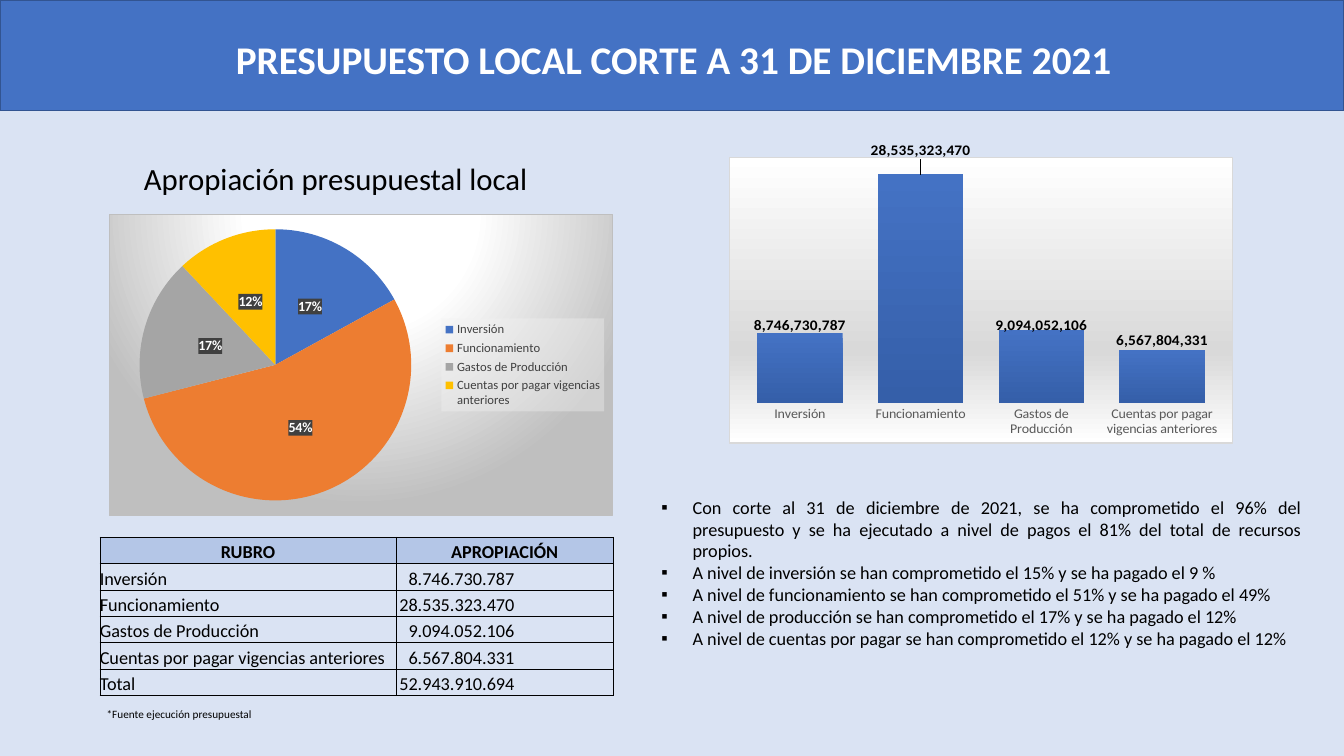
from dataclasses import dataclass

from lxml import etree
from pptx import Presentation
from pptx.chart.data import CategoryChartData
from pptx.dml.color import RGBColor
from pptx.enum import chart as ch, shapes, text
from pptx.oxml import ns, parse_xml
from pptx.util import Inches, Pt


@dataclass(frozen=True)
class Theme:
    """Colours, typeface and type sizes of the slide."""
    font: str = "Calibri"
    background: str = "DAE3F3"
    band: str = "4472C4"
    band_edge: str = "325491"
    bar_end: str = "355FA9"
    header: str = "B4C6E7"
    ink: str = "000000"
    paper: str = "FFFFFF"
    axis: str = "595959"
    legend: str = "404040"
    bar_edge: str = "D9D9D9"
    pie_edge: str = "BFBFBF"
    slices: tuple = ("4472C4", "ED7D31", "A5A5A5", "FFC000")
    title: int = 28
    heading: int = 22
    body: int = 13
    value: int = 11
    label: int = 10
    key: int = 9
    note: int = 8


THEME = Theme()
CATEGORIES = ("Inversión", "Funcionamiento", "Gastos de Producción",
              "Cuentas por pagar vigencias anteriores")
AMOUNTS = (8746730787, 28535323470, 9094052106, 6567804331)
SHARES = (17, 54, 17, 12)
LABEL_SHIFTS = (-0.07, -0.13, -0.06, -0.08)
FINDINGS = (
    "Con corte al 31 de diciembre de 2021, se ha comprometido el 96% del presupuesto "
    "y se ha ejecutado a nivel de pagos el 81% del total de recursos propios.",
    "A nivel de inversión se han comprometido el 15% y se ha pagado el 9 %",
    "A nivel de funcionamiento se han comprometido el 51% y se ha pagado el 49%",
    "A nivel de producción se han comprometido el 17% y se ha pagado el 12%",
    "A nivel de cuentas por pagar se han comprometido el 12% y se ha pagado el 12%",
)


def rgb(code):
    """Return a colour from its hex code."""
    return RGBColor.from_string(code)


def apply(target, **values):
    """Set each given attribute on the target."""
    for name, value in values.items():
        setattr(target, name, value)


def style_font(font, size, color=THEME.ink, bold=False):
    """Give a font the theme's face with a size and colour."""
    apply(font, name=THEME.font, size=Pt(size), bold=bold)
    font.color.rgb = rgb(color)


def place(shape, left, top, width, height):
    """Put a shape at a place given in inches."""
    apply(shape, left=Inches(left), top=Inches(top),
          width=Inches(width), height=Inches(height))


def write(frame, lines, size, color=THEME.ink, bold=False, align=text.PP_ALIGN.LEFT):
    """Fill a text frame with one paragraph per line."""
    apply(frame, word_wrap=True, auto_size=text.MSO_AUTO_SIZE.NONE,
          vertical_anchor=text.MSO_ANCHOR.TOP)
    for index, line in enumerate(lines):
        paragraph = frame.add_paragraph() if index else frame.paragraphs[0]
        apply(paragraph, alignment=align, space_before=Pt(0), line_spacing=1.0)
        run = paragraph.add_run()
        run.text = line
        style_font(run.font, size, color, bold)


def add_caption(slide, box, line, size):
    """Add a one-line text box."""
    caption = slide.shapes.add_textbox(*map(Inches, box))
    write(caption.text_frame, [line], size)


def add_band(slide):
    """Add the header band behind the title."""
    band = slide.shapes.add_shape(shapes.MSO_SHAPE.RECTANGLE, 0, 0,
                                  Inches(13.33), Inches(1.1))
    band.shadow.inherit = False
    band.fill.solid()
    band.fill.fore_color.rgb = rgb(THEME.band)
    band.line.color.rgb = rgb(THEME.band_edge)
    band.line.width = Pt(1)
    slide.shapes._spTree.insert(2, band._element)


def fill_findings(body):
    """Write the bulleted findings into the body placeholder."""
    place(body, 6.46, 4.87, 6.54, 1.94)
    write(body.text_frame, FINDINGS, THEME.body)
    for index, paragraph in enumerate(body.text_frame.paragraphs):
        if index < 3:
            paragraph.alignment = text.PP_ALIGN.JUSTIFY
        properties = paragraph._p.get_or_add_pPr()
        properties.set("marL", str(Inches(0.31)))
        properties.set("indent", str(Inches(-0.31)))
        etree.SubElement(properties, ns.qn("a:buChar"), char="▪")


def border_cell(cell):
    """Draw thin lines on all four sides of a cell."""
    for index, side in enumerate(("lnL", "lnR", "lnT", "lnB")):
        cell._tc.get_or_add_tcPr().insert(index, parse_xml(
            f'<a:{side} {ns.nsdecls("a")} w="{Pt(0.5)}"><a:solidFill>'
            f'<a:srgbClr val="{THEME.ink}"/></a:solidFill></a:{side}>'))


def add_budget_table(slide):
    """Add the table of items and their appropriations."""
    amounts = [f"{amount:,}".replace(",", ".") for amount in AMOUNTS]
    rows = [("RUBRO", "APROPIACIÓN"), *zip(CATEGORIES, amounts),
            ("Total", "52.943.910.694")]
    table = slide.shapes.add_table(len(rows), 2, *map(Inches, (0.99, 5.33, 5.09, 1.57))).table
    apply(table, first_row=False, horz_banding=False)
    for column, width in zip(table.columns, (2.94, 2.15)):
        column.width = Inches(width)
    for r, row in enumerate(rows):
        for c, entry in enumerate(row):
            cell = table.cell(r, c)
            align = text.PP_ALIGN.RIGHT if c else text.PP_ALIGN.LEFT
            write(cell.text_frame, [entry], THEME.body, bold=r == 0,
                  align=align if r else text.PP_ALIGN.CENTER)
            apply(cell, margin_left=0, margin_top=0, margin_bottom=0,
                  margin_right=Inches(0.98 if r and c else 0),
                  vertical_anchor=text.MSO_ANCHOR.BOTTOM)
            if r:
                cell.fill.background()
            else:
                cell.fill.solid()
                cell.fill.fore_color.rgb = rgb(THEME.header)
            border_cell(cell)


def layout_xml(mode="", **fractions):
    """Build a manual chart layout from fractions of the chart area."""
    parts = "".join(f'<c:{name} val="{value}"/>' for name, value in fractions.items())
    return parse_xml(f'<c:layout {ns.nsdecls("c")}><c:manualLayout>{mode}{parts}'
                     '</c:manualLayout></c:layout>')


def add_chart(slide, kind, box, values, plot, stops, direction, edge):
    """Add a one-series chart with a gradient background."""
    data = CategoryChartData()
    data.categories = CATEGORIES
    data.add_series("Series 1", values)
    chart = slide.shapes.add_chart(kind, *map(Inches, box), data).chart
    apply(chart, has_title=False, has_legend=False)
    style_font(chart.font, THEME.label)
    area = chart._chartSpace.chart.plotArea
    for old in area.findall(ns.qn("c:layout")):
        area.remove(old)
    mode = ('<c:layoutTarget val="inner"/><c:xMode val="edge"/><c:yMode val="edge"/>')
    area.insert(0, layout_xml(mode, **dict(zip("xywh", plot))))
    colors = "".join(f'<a:gs pos="{at * 1000}"><a:srgbClr val="{code}"/></a:gs>'
                     for at, code in stops)
    chart._chartSpace.chart.addnext(parse_xml(
        f'<c:spPr {ns.nsdecls("c", "a")}><a:gradFill><a:gsLst>{colors}</a:gsLst>{direction}'
        f'</a:gradFill><a:ln w="{Pt(0.75)}"><a:solidFill><a:srgbClr val="{edge}"/>'
        '</a:solidFill></a:ln></c:spPr>'))
    return chart


def add_amount_chart(slide):
    """Add the column chart of amounts."""
    chart = add_chart(slide, ch.XL_CHART_TYPE.COLUMN_CLUSTERED, (7.23, 1.4, 5, 3), AMOUNTS,
                      (0.02, 0.02, 0.96, 0.84),
                      ((0, THEME.paper), (68, THEME.bar_edge), (100, THEME.paper)),
                      '<a:lin ang="5400000" scaled="0"/>', THEME.bar_edge)
    apply(chart.value_axis, visible=False, has_major_gridlines=False,
          minimum_scale=0, maximum_scale=30000000000)
    chart.category_axis.major_tick_mark = ch.XL_TICK_MARK.NONE
    chart.category_axis.format.line.fill.background()
    style_font(chart.category_axis.tick_labels.font, THEME.label, THEME.axis)
    apply(chart.plots[0], gap_width=41, vary_by_categories=False)
    bars = chart.plots[0].series[0]
    bars.format.fill.gradient()
    bars.format.fill.gradient_angle = 270
    for stop, at, code in zip(bars.format.fill.gradient_stops, (0, 1),
                              (THEME.band, THEME.bar_end)):
        stop.position = at
        stop.color.rgb = rgb(code)
    apply(bars.data_labels, show_value=True, number_format="#,##0",
          number_format_is_linked=False, position=ch.XL_LABEL_POSITION.INSIDE_END)
    style_font(bars.data_labels.font, THEME.value, bold=True)
    for index, shift in enumerate(LABEL_SHIFTS):
        label = bars.points[index].data_label
        label.position = ch.XL_LABEL_POSITION.INSIDE_END
        style_font(label.font, THEME.value, bold=True)
        element = label._get_or_add_dLbl()
        element.insert(1, layout_xml(x=0, y=shift))
        element.insert(2, parse_xml(f'<c:numFmt {ns.nsdecls("c")} formatCode="#,##0" '
                                    'sourceLinked="0"/>'))


def shade_box(code, alpha):
    """Build a see-through fill for a chart part."""
    return parse_xml(f'<c:spPr {ns.nsdecls("c", "a")}><a:solidFill><a:srgbClr val="{code}">'
                     f'<a:alpha val="{alpha * 1000}"/></a:srgbClr></a:solidFill></c:spPr>')


def add_share_chart(slide):
    """Add the pie chart of shares."""
    focus = ('<a:path path="circle"><a:fillToRect l="50000" t="-80000" r="50000" '
             'b="180000"/></a:path>')
    chart = add_chart(slide, ch.XL_CHART_TYPE.PIE, (1.08, 2.12, 5, 3), SHARES,
                      (0.06, 0.05, 0.54, 0.9),
                      ((0, THEME.paper), (39, THEME.paper), (100, THEME.pie_edge)),
                      focus, THEME.pie_edge)
    chart.has_legend = True
    apply(chart.legend, position=ch.XL_LEGEND_POSITION.RIGHT, include_in_layout=False)
    style_font(chart.legend.font, THEME.key, THEME.legend)
    chart.legend._element.find(ns.qn("c:txPr")).addprevious(shade_box("F2F2F2", 39))
    pie = chart.plots[0].series[0]
    for index, code in enumerate(THEME.slices):
        fill = pie.points[index].format.fill
        fill.solid()
        fill.fore_color.rgb = rgb(code)
    labels = pie.data_labels
    apply(labels, show_percentage=True, show_value=False, number_format="0%",
          number_format_is_linked=False, position=ch.XL_LABEL_POSITION.CENTER)
    style_font(labels.font, THEME.label, THEME.paper, True)
    labels._element.find(ns.qn("c:txPr")).addprevious(shade_box(THEME.legend, 90))


def main():
    """Build the budget slide and save it."""
    deck = Presentation()
    apply(deck, slide_width=Inches(13.33), slide_height=Inches(7.5))
    slide = deck.slides.add_slide(deck.slide_layouts[1])
    slide.background.fill.solid()
    slide.background.fill.fore_color.rgb = rgb(THEME.background)
    title, body = slide.placeholders
    add_band(slide)
    place(title, 2.24, 0.3, 9.17, 0.57)
    write(title.text_frame, ["PRESUPUESTO LOCAL CORTE A 31 DE DICIEMBRE 2021"],
          THEME.title, THEME.paper, True)
    add_caption(slide, (1.33, 1.54, 4.4, 0.47), "Apropiación presupuestal local", THEME.heading)
    fill_findings(body)
    add_caption(slide, (0.96, 6.97, 1.66, 0.24), "*Fuente ejecución presupuestal", THEME.note)
    add_budget_table(slide)
    add_amount_chart(slide)
    add_share_chart(slide)
    deck.save("out.pptx")


if __name__ == "__main__":
    main()
